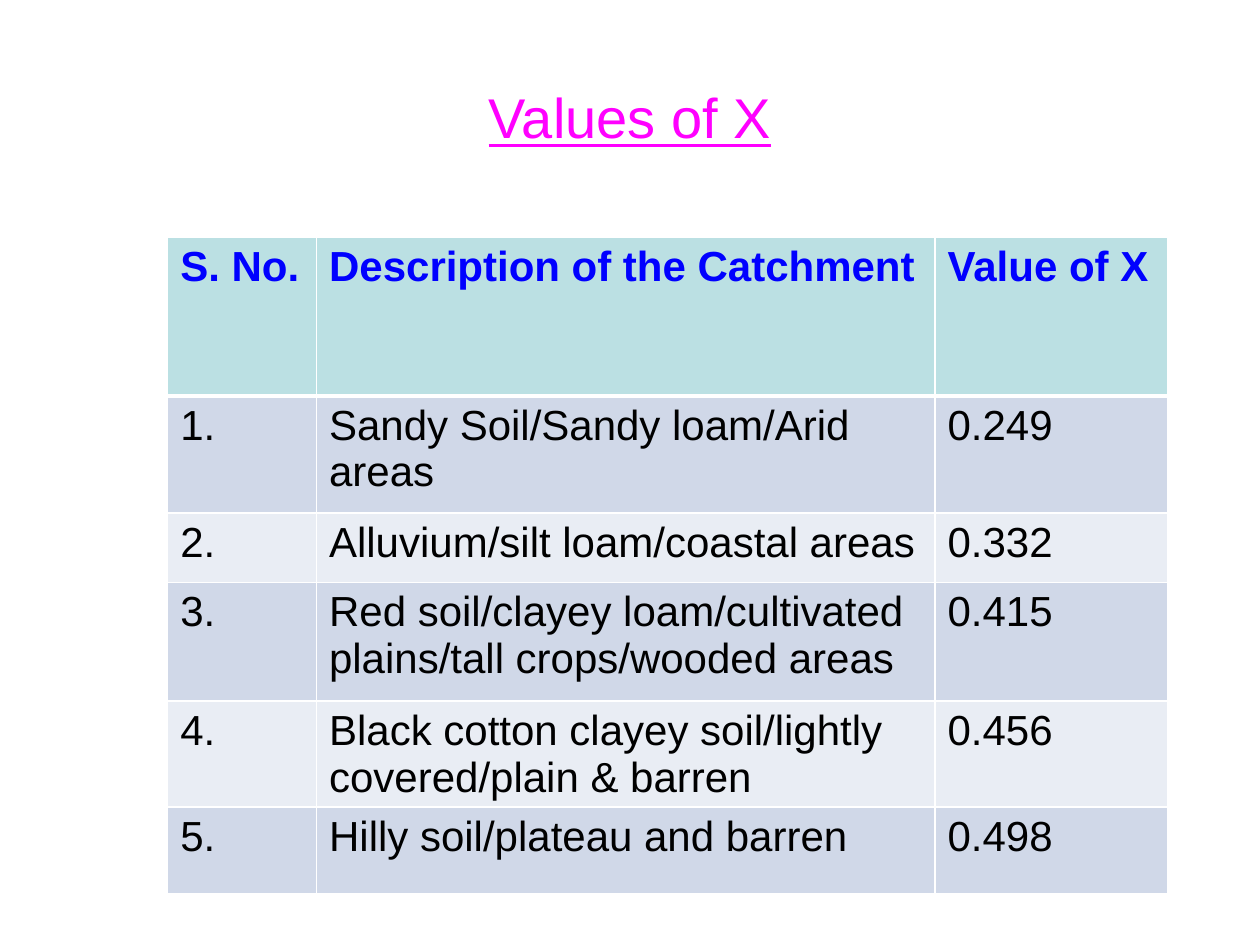
from typing import NamedTuple

from lxml.etree import SubElement
from pptx import Presentation
from pptx.dml.color import RGBColor
from pptx.enum.text import MSO_ANCHOR, PP_ALIGN
from pptx.oxml.ns import qn
from pptx.util import Cm, Pt

MAGENTA = RGBColor(0xFF, 0x00, 0xFF)
BLUE = RGBColor(0x00, 0x00, 0xFF)
BLACK = RGBColor(0x00, 0x00, 0x00)
WHITE = RGBColor(0xFF, 0xFF, 0xFF)
HEADER_TEAL = RGBColor(0xBB, 0xE0, 0xE3)
BANDS = (RGBColor(0xD0, 0xD8, 0xE8), RGBColor(0xE9, 0xED, 0xF4))

FONT = "Arial"
COLUMN_WIDTHS = (3.0, 12.47, 4.7)


class CatchmentRow(NamedTuple):
    number: str
    description: str
    value: str
    height: float


class CellStyle(NamedTuple):
    fill: RGBColor
    color: RGBColor
    bold: bool
    top_line: float
    bottom_line: float


HEADINGS = CatchmentRow("S. No.", "Description of the Catchment", "Value of X", 3.2)
CATCHMENTS = (
    CatchmentRow("1.", "Sandy Soil/Sandy loam/Arid areas", "0.249", 2.36),
    CatchmentRow("2.", "Alluvium/silt loam/coastal areas", "0.332", 1.4),
    CatchmentRow("3.", "Red soil/clayey loam/cultivated plains/tall crops/wooded areas", "0.415", 2.39),
    CatchmentRow("4.", "Black cotton clayey soil/lightly covered/plain & barren", "0.456", 1.75),
    CatchmentRow("5.", "Hilly soil/plateau and barren", "0.498", 1.75),
)


def add_text(paragraph, text: str, size: float, color: RGBColor):
    run = paragraph.add_run()
    run.text = text
    run.font.name = FONT
    run.font.size = Pt(size)
    run.font.color.rgb = color
    return run


def set_borders(cell, top: float, bottom: float) -> None:
    properties = cell._tc.get_or_add_tcPr()
    for side, width in (("L", 1), ("R", 1), ("T", top), ("B", bottom)):
        line = SubElement(properties, qn(f"a:ln{side}"), w=str(Pt(width)))
        line_fill = SubElement(line, qn("a:solidFill"))
        SubElement(line_fill, qn("a:srgbClr"), val=str(WHITE))


def style_for(index: int) -> CellStyle:
    if index == 0:
        return CellStyle(HEADER_TEAL, BLUE, True, 1, 3)
    return CellStyle(BANDS[(index - 1) % 2], BLACK, False, 3 if index == 1 else 1, 1)


def fill_cell(cell, text: str, style: CellStyle) -> None:
    set_borders(cell, style.top_line, style.bottom_line)
    cell.fill.solid()
    cell.fill.fore_color.rgb = style.fill
    run = add_text(cell.text_frame.paragraphs[0], text, 24, style.color)
    run.font.bold = style.bold


def add_title(slide) -> None:
    title = slide.shapes.title
    title.left, title.top = Cm(1.27), Cm(0.76)
    title.width, title.height = Cm(22.86), Cm(3.18)
    title.text_frame.vertical_anchor = MSO_ANCHOR.MIDDLE
    heading = title.text_frame.paragraphs[0]
    heading.alignment = PP_ALIGN.CENTER
    add_text(heading, "Values of X", 32, MAGENTA).font.underline = True


def add_catchment_table(slide) -> None:
    rows = (HEADINGS, *CATCHMENTS)
    table = slide.shapes.add_table(
        len(rows), len(COLUMN_WIDTHS), Cm(3.38), Cm(4.78),
        Cm(sum(COLUMN_WIDTHS)), Cm(sum(row.height for row in rows)),
    ).table
    for column, width in zip(table.columns, COLUMN_WIDTHS):
        column.width = Cm(width)
    for index, row in enumerate(rows):
        table.rows[index].height = Cm(row.height)
        texts = (row.number, row.description, row.value)
        for cell, text in zip(table.rows[index].cells, texts):
            fill_cell(cell, text, style_for(index))


def main() -> None:
    presentation = Presentation()
    presentation.slide_width, presentation.slide_height = Cm(25.4), Cm(19.05)
    slide = presentation.slides.add_slide(presentation.slide_layouts[5])
    add_title(slide)
    add_catchment_table(slide)
    presentation.save("out.pptx")


if __name__ == "__main__":
    main()
